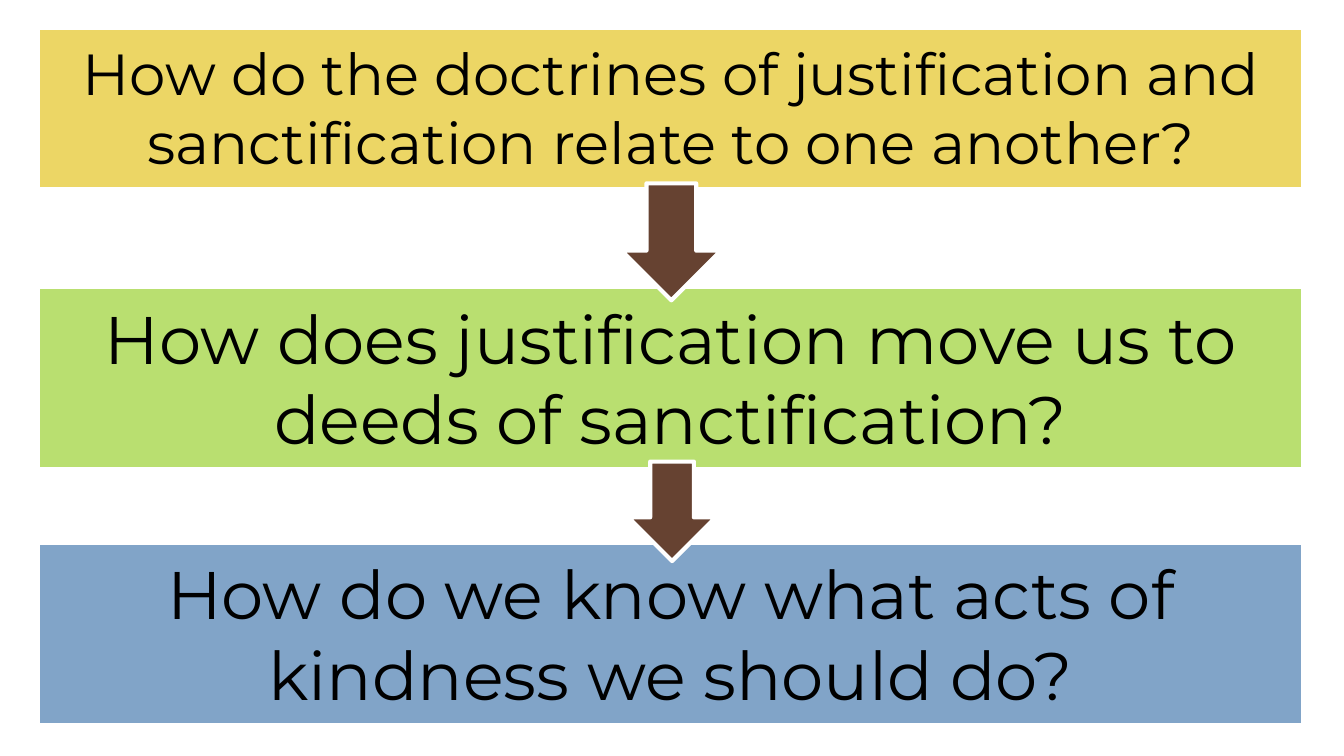
from pptx import Presentation
from pptx.dml.color import RGBColor
from pptx.enum import shapes, text
from pptx.util import Inches, Pt


def add_block(kind, left, top, width, height, fill, line_width):
    shape = slide.shapes.add_shape(
        kind, Inches(left), Inches(top), Inches(width), Inches(height))
    shape.shadow.inherit = False
    shape.fill.solid()
    shape.fill.fore_color.rgb = RGBColor.from_string(fill)
    shape.line.color.rgb = RGBColor.from_string("FFFFFF")
    shape.line.width = Pt(line_width)
    return shape


def write_text(shape, wording, *, size, font="Montserrat", color="000000"):
    frame = shape.text_frame
    frame.word_wrap = True
    frame.auto_size = text.MSO_AUTO_SIZE.SHAPE_TO_FIT_TEXT
    frame.vertical_anchor = text.MSO_ANCHOR.TOP
    frame.margin_left = frame.margin_right = Inches(0.1)
    frame.margin_top = frame.margin_bottom = Inches(0.1)
    paragraph = frame.paragraphs[0]
    paragraph.alignment = text.PP_ALIGN.CENTER
    run = paragraph.add_run()
    run.text = wording
    run.font.size = Pt(size)
    run.font.name = font
    run.font.color.rgb = RGBColor.from_string(color)


# Widescreen 16:9 slide
presentation = Presentation()
presentation.slide_width = Inches(10)
presentation.slide_height = Inches(10 * 9 / 16)
slide = presentation.slides.add_slide(presentation.slide_layouts[6])

# Question bands: top, height, fill, text size, wording
questions = [
    (0.18, 1.25, "ECD665", 31,
     "How do the doctrines of justification and sanctification relate to one another?"),
    (2.11, 1.41, "B9DF70", 36,
     "How does justification move us to deeds of sanctification?"),
    (4.01, 1.41, "81A4C8", 36,
     "How do we know what acts of kindness we should do?"),
]
for top, height, fill, size, wording in questions:
    band = add_block(shapes.MSO_SHAPE.RECTANGLE, 0.26, top, 9.46, height, fill, 6)
    write_text(band, wording, size=size)

# Arrows from each question down to the next, turned to point down
for left, top, length, breadth in [(4.56, 1.43, 0.87, 0.74), (4.63, 3.48, 0.74, 0.65)]:
    arrow = add_block(
        shapes.MSO_SHAPE.RIGHT_ARROW, left, top, length, breadth, "664231", 2.25)
    arrow.rotation = 90

presentation.save("out.pptx")
